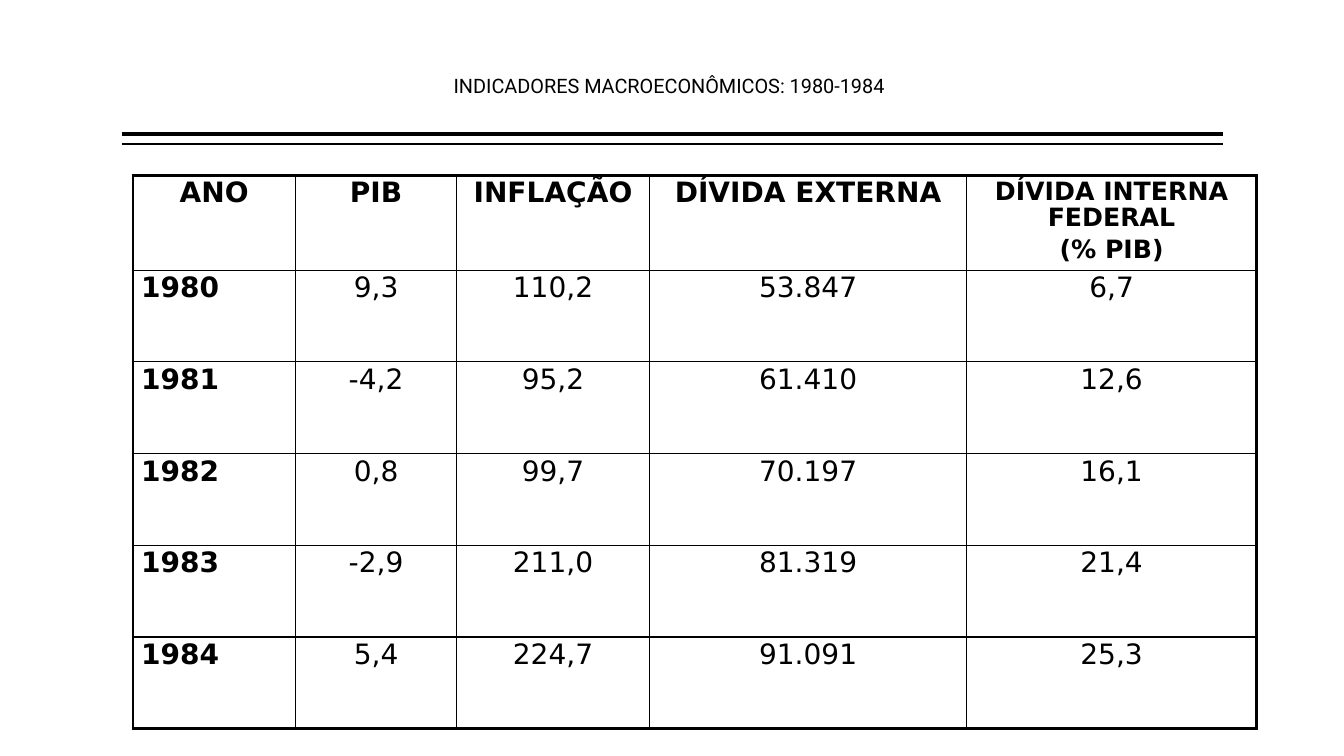
from lxml import etree
from pptx import Presentation
from pptx import util as u
from pptx.dml.color import RGBColor
from pptx.enum import shapes, text
from pptx.oxml.ns import qn

COLUMN_WIDTHS = [1.61, 1.6, 1.91, 3.15, 2.87]
ROW_HEIGHT = 0.91
INDICATORS = [
    ["ANO", "PIB", "INFLAÇÃO", "DÍVIDA EXTERNA", "DÍVIDA INTERNA FEDERAL\n(% PIB)"],
    ["1980", "9,3", "110,2", "53.847", "6,7"],
    ["1981", "-4,2", "95,2", "61.410", "12,6"],
    ["1982", "0,8", "99,7", "70.197", "16,1"],
    ["1983", "-2,9", "211,0", "81.319", "21,4"],
    ["1984", "5,4", "224,7", "91.091", "25,3"],
]


def color(hex_code):
    return RGBColor.from_string(hex_code)


class IndicatorSlide:
    ink = "000000"
    title_font = "Roboto"
    table_font = "DejaVu Sans"
    inner_border = 1
    outer_border = 2.25

    def __init__(self, slide):
        self.slide = slide

    def format_text(self, frame, font, size, bold=False, centered=True, space=0):
        for paragraph in frame.paragraphs:
            paragraph.alignment = text.PP_ALIGN.CENTER if centered else text.PP_ALIGN.LEFT
            paragraph.line_spacing = 0.9
            paragraph.space_before = u.Pt(space)
            for run in paragraph.runs:
                run.font.name = font
                run.font.size = u.Pt(size)
                run.font.bold = bold
                run.font.color.rgb = color(self.ink)

    def title(self, wording, left, top, width, height):
        box = self.slide.shapes.add_textbox(
            u.Inches(left), u.Inches(top), u.Inches(width), u.Inches(height))
        frame = box.text_frame
        frame.word_wrap = True
        frame.vertical_anchor = text.MSO_ANCHOR.BOTTOM
        frame.margin_left = frame.margin_right = u.Inches(0.07)
        frame.margin_top = frame.margin_bottom = u.Inches(0.05)
        frame.text = wording
        self.format_text(frame, self.title_font, 14.2)

    def rule(self, left, right, y, weight):
        line = self.slide.shapes.add_connector(
            shapes.MSO_CONNECTOR.STRAIGHT,
            u.Inches(left), u.Inches(y), u.Inches(right), u.Inches(y))
        line.line.color.rgb = color(self.ink)
        line.line.width = u.Pt(weight)
        etree.SubElement(line._element.spPr, qn("a:effectLst"))

    def borders(self, cell, outer_sides):
        """Draw all four cell edges, heavier on the sides given."""
        properties = cell._tc.get_or_add_tcPr()
        for position, side in enumerate("LRTB"):
            weight = self.outer_border if side in outer_sides else self.inner_border
            edge = etree.Element(qn(f"a:ln{side}"), w=str(u.Pt(weight)))
            fill = etree.SubElement(edge, qn("a:solidFill"))
            etree.SubElement(fill, qn("a:srgbClr"), val=self.ink)
            properties.insert(position, edge)

    def table(self, rows, widths, row_height, left, top):
        frame = self.slide.shapes.add_table(
            len(rows), len(widths), u.Inches(left), u.Inches(top),
            u.Inches(sum(widths)), u.Inches(row_height * len(rows)))
        table = frame.table
        table.first_row = table.horz_banding = False
        for column, width in zip(table.columns, widths):
            column.width = u.Inches(width)
        last_row, last_column = len(rows) - 1, len(widths) - 1
        for r, row in enumerate(rows):
            table.rows[r].height = u.Inches(row_height)
            for c, wording in enumerate(row):
                cell = table.cell(r, c)
                cell.margin_left = cell.margin_right = u.Inches(0.08)
                cell.margin_top = cell.margin_bottom = u.Inches(0.04)
                cell.fill.background()
                cell.text_frame.text = wording
                size = 18 if "\n" in wording else 20
                self.format_text(cell.text_frame, self.table_font, size,
                                 bold=r == 0 or c == 0,
                                 centered=r == 0 or c > 0, space=size * 0.2)
                edges = {"L": c == 0, "R": c == last_column,
                         "T": r == 0, "B": r == last_row}
                self.borders(cell, [side for side, outer in edges.items() if outer])


def main():
    deck = Presentation()
    deck.slide_width, deck.slide_height = u.Inches(13.33), u.Inches(7.5)
    page = IndicatorSlide(deck.slides.add_slide(deck.slide_layouts[6]))
    page.rule(1.21, 12.13, 1.33, weight=3)
    page.rule(1.21, 12.13, 1.43, weight=1)
    page.title("INDICADORES MACROECONÔMICOS: 1980-1984", 2.26, 0.02, 8.75, 1)
    page.table(INDICATORS, COLUMN_WIDTHS, ROW_HEIGHT, left=1.32, top=1.74)
    deck.save("out.pptx")


if __name__ == "__main__":
    main()
